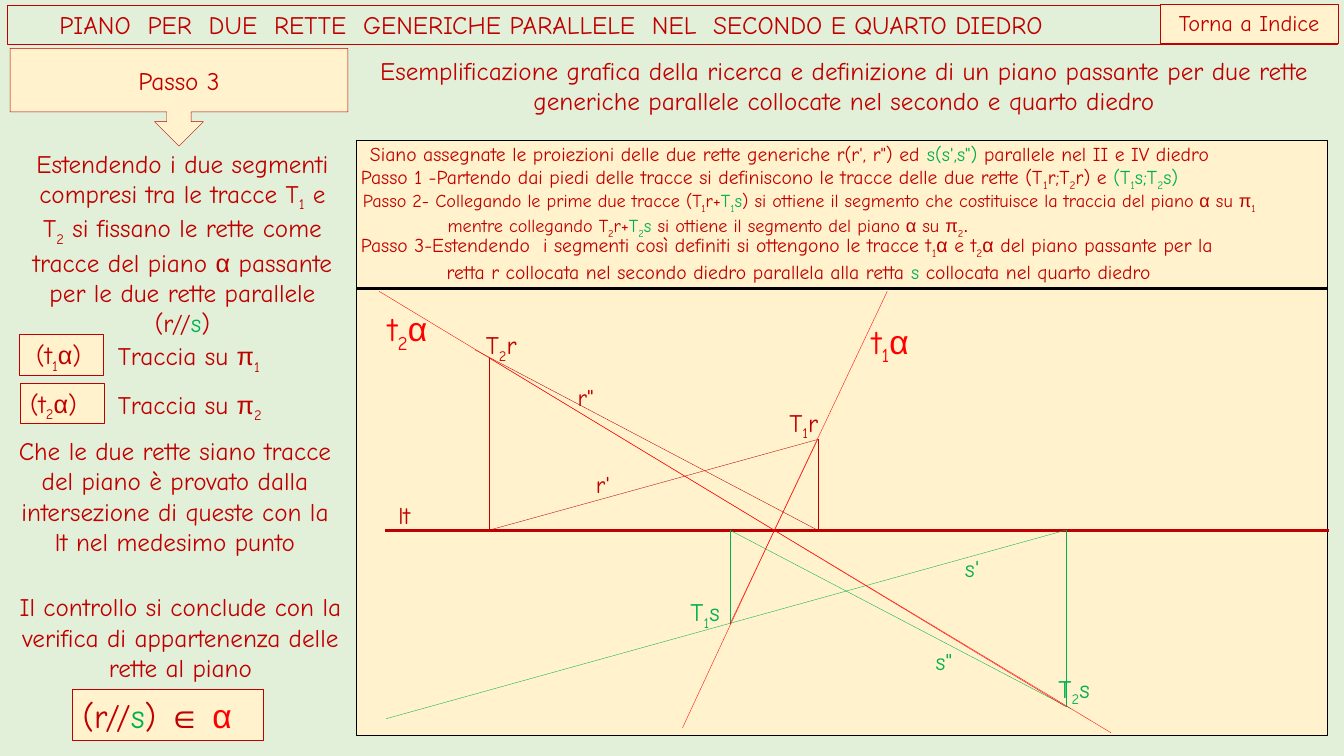
import itertools
from dataclasses import dataclass

import lxml.etree
import pptx
import pptx.dml.color
import pptx.enum.shapes
import pptx.enum.text
import pptx.oxml.ns
import pptx.util

PX = 9144  # 100 px to the inch
SHAPE = pptx.enum.shapes.MSO_SHAPE
ANCHOR = pptx.enum.text.MSO_ANCHOR
ALIGN = pptx.enum.text.PP_ALIGN
AUTO = pptx.enum.text.MSO_AUTO_SIZE


@dataclass(frozen=True)
class Theme:
    page: str = "E2F0D9"
    panel: str = "FFF2CC"
    dark: str = "C00000"
    green: str = "00B050"
    red: str = "FF0000"
    black: str = "000000"
    font: str = "Comic Neue"
    symbol_font: str = "Arial"
    small: int = 13
    step: int = 14
    button: int = 16
    label: int = 17
    body: int = 18
    large: int = 24
    hair: float = 0.25


T = Theme()


@dataclass(frozen=True)
class Box:
    """Text marks: _ lowers the next letter, [..] is green, {..} is red.
    indents gives the left indent of each paragraph."""
    x: int
    y: int
    w: int
    h: int
    text: str = ""
    size: int = T.body
    centered: bool = False
    inset: bool = True
    wrap: bool = True
    grow: bool = True
    middle: bool = False
    indents: tuple[int, ...] = (0,)
    kind: SHAPE | None = None
    fill: str | None = T.panel
    line: str = T.dark
    weight: float = T.hair


@dataclass(frozen=True)
class Segment:
    start: tuple[int, int]
    end: tuple[int, int]
    color: str
    weight: float = T.hair


def rgb(color: str) -> pptx.dml.color.RGBColor:
    return pptx.dml.color.RGBColor.from_string(color)


def add_run(p, text: str, *, size: int, color: str, lowered: bool, symbol: bool) -> None:
    r = p.add_run()
    r.text = text
    r.font.size = pptx.util.Pt(size)
    r.font.name = T.symbol_font if symbol else T.font
    r.font.color.rgb = rgb(color)
    r.font.bold = text == "∈"
    if lowered:
        r._r.get_or_add_rPr().set("baseline", "-25000")


def add_marked(p, text: str, size: int) -> None:
    colors = {"[": T.green, "{": T.red, "]": T.dark, "}": T.dark}
    color, lowered, letters = T.dark, False, []
    for ch in text:
        if ch in colors:
            color = colors[ch]
        elif ch == "_":
            lowered = True
        else:
            letters.append((ch, (color, lowered, ch in "απ∈.")))
            lowered = False
    for (color, lowered, symbol), group in itertools.groupby(letters, lambda item: item[1]):
        add_run(p, "".join(ch for ch, _ in group), size=size, color=color,
                lowered=lowered, symbol=symbol)


def draw_box(s, b: Box) -> None:
    frame = [v * PX for v in (b.x, b.y, b.w, b.h)]
    if b.kind is None:
        sp = s.shapes.add_textbox(*frame)
    else:
        sp = s.shapes.add_shape(b.kind, *frame)
        sp.shadow.inherit = False
        if b.fill:
            sp.fill.solid()
            sp.fill.fore_color.rgb = rgb(b.fill)
        else:
            sp.fill.background()
        sp.line.color.rgb = rgb(b.line)
        sp.line.width = pptx.util.Pt(b.weight)
    if not b.text:
        return
    tf = sp.text_frame
    tf.word_wrap = b.wrap
    tf.auto_size = AUTO.SHAPE_TO_FIT_TEXT if b.grow else AUTO.NONE
    tf.vertical_anchor = ANCHOR.MIDDLE if b.middle else ANCHOR.TOP
    if not b.inset:
        tf.margin_left = tf.margin_right = tf.margin_top = tf.margin_bottom = 0
    for i, (text, indent) in enumerate(zip(b.text.split("\n"), b.indents)):
        p = tf.add_paragraph() if i else tf.paragraphs[0]
        p.alignment = ALIGN.CENTER if b.centered else ALIGN.LEFT
        if indent:
            p._p.get_or_add_pPr().set("marL", str(indent * PX))
        add_marked(p, text, b.size)


def draw_segment(s, seg: Segment) -> None:
    ends = [v * PX for v in (*seg.start, *seg.end)]
    sp = s.shapes.add_connector(pptx.enum.shapes.MSO_CONNECTOR.STRAIGHT, *ends)
    sp.line.color.rgb = rgb(seg.color)
    sp.line.width = pptx.util.Pt(seg.weight)
    lxml.etree.SubElement(sp._element.spPr, pptx.oxml.ns.qn("a:effectLst"))


# Header and left column
HEADER = [
    Box(7, 5, 1319, 39, "PIANO  PER  DUE  RETTE  GENERICHE PARALLELE  NEL  SECONDO E QUARTO DIEDRO",
        grow=False, middle=True, indents=(42,), kind=SHAPE.RECTANGLE, fill=None),
    Box(10, 48, 335, 97, "Passo 3", centered=True, grow=False, middle=True,
        kind=SHAPE.DOWN_ARROW_CALLOUT),
    Box(1151, 4, 176, 39, "Torna a Indice", T.button, centered=True, kind=SHAPE.RECTANGLE),
    Box(353, 50, 968, 71, "Esemplificazione grafica della ricerca e definizione di un piano passante "
        "per due rette generiche parallele collocate nel secondo e quarto diedro", centered=True),
]
COLUMN = [
    Box(16, 142, 330, 192, "Estendendo i due segmenti compresi tra le tracce T_1 e T_2 si fissano le rette "
        "come tracce del piano α passante per le due rette parallele (r//[s])", centered=True),
    Box(19, 332, 83, 40, "(t_1α)", indents=(7,), kind=SHAPE.RECTANGLE),
    Box(20, 380, 83, 40, "(t_2α)", kind=SHAPE.RECTANGLE),
    Box(107, 333, 186, 40, "Traccia su π_1"),
    Box(107, 381, 212, 40, "Traccia su π_2"),
    Box(6, 427, 335, 162, "Che le due rette siano tracce del piano è provato dalla intersezione di queste "
        "con la lt nel medesimo punto", centered=True),
    Box(6, 582, 346, 101, "Il controllo si conclude con la verifica di appartenenza delle rette al piano",
        centered=True),
    Box(72, 684, 189, 50, "(r//[s]) ∈ {α}", T.large, kind=SHAPE.RECTANGLE),
]

# Panel with the listed steps
PANEL = Box(354, 139, 963, 591, kind=SHAPE.RECTANGLE, line=T.black, weight=0)
STEPS = [
    Box(367, 141, 927, 24, "Siano assegnate le proiezioni delle due rette generiche r(r', r\") ed "
        "[s(s',s\")] parallele nel II e IV diedro", T.step, inset=False),
    Box(358, 164, 940, 24, "Passo 1 -Partendo dai piedi delle tracce si definiscono le tracce delle due "
        "rette (T_1r;T_2r) e [(T_1s;T_2s)]", T.step, inset=False),
    Box(360, 188, 955, 44, "Passo 2- Collegando le prime due tracce (T_1r+[T_1s]) si ottiene il segmento "
        "che costituisce la traccia del piano α su π_1\n"
        "mentre collegando T_2r+[T_2s] si ottiene il segmento del piano α su π_2.",
        T.small, inset=False, indents=(0, 84)),
    Box(352, 231, 955, 47, "Passo 3-Estendendo  i segmenti così definiti si ottengono le tracce t_1α e t_2α "
        "del piano passante per la\n"
        "retta r collocata nel secondo diedro parallela alla retta [s] collocata nel quarto diedro",
        T.step, inset=False, indents=(6, 91)),
]

# Points of the construction: traces and their feet on the ground line
GROUND = 526
T1R, T2R, T1S, T2S = (811, 436), (485, 355), (724, 619), (1057, 701)
FOOT_T1R, FOOT_T2R, FOOT_T1S, FOOT_T2S = ((x, GROUND) for x, _ in (T1R, T2R, T1S, T2S))
MEETING = (768, GROUND)
SEGMENTS = [
    Segment((1317, 286), (354, 286), T.black, 0),
    Segment((382, GROUND), (1318, GROUND), T.dark, 0),
    Segment(FOOT_T2R, T1R, T.dark),
    Segment(FOOT_T1R, (471, 347), T.dark),
    Segment((383, 713), FOOT_T2S, T.green),
    Segment((1062, 703), FOOT_T1S, T.green),
    Segment(FOOT_T2R, T2R, T.dark),
    Segment(FOOT_T1R, T1R, T.dark),
    Segment(FOOT_T1S, T1S, T.green),
    Segment(FOOT_T2S, T2S, T.green),
    Segment(T2R, T2S, T.red),
    Segment(T1S, T1R, T.red),
    *(Segment(MEETING, far, T.red) for far in ((677, 722), (880, 289), (376, 289), (1102, 727))),
]
LINE_NAMES = [("r\"", 573, 380), ("r'", 591, 466), ("[s\"]", 928, 642), ("[s']", 957, 549), ("lt", 395, 497)]
TRACE_NAMES = [("T_2r", 472, 322), ("T_1r", 773, 399), ("[T_2s]", 1040, 663), ("[T_1s]", 675, 587)]
PLANE_NAMES = [("{t_1α}", 855, 313), ("{t_2α}", 375, 301)]
LABELS = [
    *(Box(x, y, 21, 30, text, T.label, inset=False, wrap=False) for text, x, y in LINE_NAMES),
    *(Box(x, y, 64, 40, text) for text, x, y in TRACE_NAMES),
    *(Box(x, y, 80, 50, text, T.large) for text, x, y in PLANE_NAMES),
]


def main() -> None:
    prs = pptx.Presentation()
    prs.slide_width, prs.slide_height = 1333 * PX, 750 * PX
    s = prs.slides.add_slide(prs.slide_layouts[6])
    s.background.fill.solid()
    s.background.fill.fore_color.rgb = rgb(T.page)
    for box in [*HEADER, *COLUMN, PANEL, *STEPS]:
        draw_box(s, box)
    for segment in SEGMENTS:
        draw_segment(s, segment)
    for box in LABELS:
        draw_box(s, box)
    prs.save("out.pptx")


if __name__ == "__main__":
    main()
